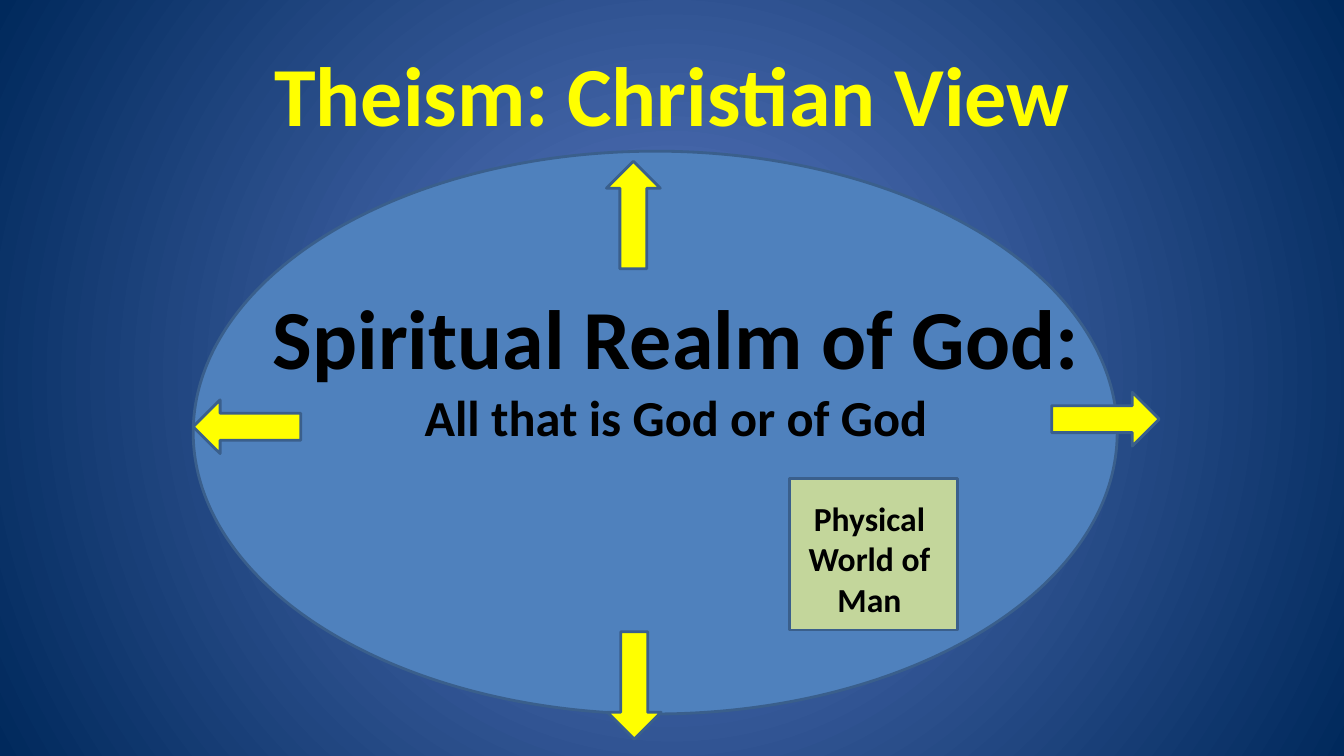
from dataclasses import dataclass

from lxml.etree import SubElement
from pptx import Presentation
from pptx.dml.color import RGBColor
from pptx.enum.shapes import MSO_SHAPE
from pptx.enum.text import MSO_ANCHOR, MSO_AUTO_SIZE, PP_ALIGN
from pptx.oxml.ns import qn
from pptx.slide import Slide
from pptx.text.text import TextFrame
from pptx.util import Inches, Pt

COLS, ROWS = 160, 90
WIDTH, HEIGHT = Inches(13.333), Inches(7.5)

YELLOW = RGBColor(0xFF, 0xFF, 0x00)
BLACK = RGBColor(0x00, 0x00, 0x00)
BLUE = RGBColor(0x4F, 0x81, 0xBD)
GREEN = RGBColor(0xC3, 0xD6, 0x9B)
EDGE = RGBColor(0x3A, 0x5F, 0x8C)
GLOW = RGBColor(0x5E, 0x7C, 0xC5)
NAVY = RGBColor(0x00, 0x29, 0x5C)


@dataclass(frozen=True)
class Box:
    """Area in grid columns and rows."""
    col: float
    row: float
    wide: float
    high: float


@dataclass(frozen=True)
class Form:
    """Filled preset shape."""
    kind: MSO_SHAPE
    box: Box
    fill: RGBColor
    turn: int = 0


@dataclass(frozen=True)
class Line:
    """Paragraph with its size in points."""
    text: str
    size: int


@dataclass(frozen=True)
class Label:
    """Text box with its lines and top inset."""
    box: Box
    lines: tuple[Line, ...]
    top: float = 0.05


def arrow(col: float, row: float, turn: int) -> Form:
    """Describe a yellow arrow."""
    return Form(MSO_SHAPE.RIGHT_ARROW, Box(col, row, 12.8, 6.4), YELLOW, turn)


TITLE = Box(8, 3.6, 144, 15)
FORMS = (
    Form(MSO_SHAPE.OVAL, Box(23, 18, 110, 67), BLUE),
    Form(MSO_SHAPE.RECTANGLE, Box(94, 57, 20, 18), GREEN),
    arrow(69, 22.4, 270),
    arrow(69.1, 78.4, 90),
    arrow(23, 47.6, 180),
    arrow(125.2, 46.7, 0),
)
LABELS = (
    Label(Box(27, 33.4, 107, 20.6), (
        Line("Spiritual Realm of God:", 60),
        Line("All that is God or of God", 36),
    )),
    Label(Box(93, 57, 21, 17.4), (Line("Physical World of Man", 24),), 0.19),
)


def span(box: Box) -> dict[str, int]:
    """Turn a grid area into slide lengths."""
    return {
        "left": round(WIDTH * box.col / COLS),
        "top": round(HEIGHT * box.row / ROWS),
        "width": round(WIDTH * box.wide / COLS),
        "height": round(HEIGHT * box.high / ROWS),
    }


def apply(item: object, values: dict[str, object]) -> None:
    """Set attributes from a dict."""
    for name, value in values.items():
        setattr(item, name, value)


def write(frame: TextFrame, lines: tuple[Line, ...], color: RGBColor) -> None:
    """Fill a frame with bold centred lines."""
    for i, line in enumerate(lines):
        para = frame.add_paragraph() if i else frame.paragraphs[0]
        para.alignment = PP_ALIGN.CENTER
        run = para.add_run()
        run.text = line.text
        apply(run.font, {"name": "Calibri", "size": Pt(line.size), "bold": True})
        run.font.color.rgb = color


def paint(slide: Slide) -> None:
    """Give the slide a round gradient."""
    fill = slide.background.fill
    fill.gradient()
    for stop, color in zip(fill.gradient_stops, (GLOW, NAVY)):
        stop.color.rgb = color
    grad = next(slide.element.iter(qn("a:gradFill")))
    grad.remove(grad.find(qn("a:lin")))
    ring = SubElement(grad, qn("a:path"), {"path": "circle"})
    SubElement(ring, qn("a:fillToRect"), dict.fromkeys("ltrb", "50000"))


def head(slide: Slide) -> None:
    """Place and fill the title."""
    title = slide.shapes.title
    apply(title, span(TITLE))
    apply(title.text_frame, {
        "word_wrap": True,
        "auto_size": MSO_AUTO_SIZE.NONE,
        "vertical_anchor": MSO_ANCHOR.MIDDLE,
    })
    write(title.text_frame, (Line("Theism: Christian View", 60),), YELLOW)


def draw(slide: Slide, form: Form) -> None:
    """Draw a preset shape."""
    shape = slide.shapes.add_shape(form.kind, **span(form.box))
    shape.rotation = form.turn
    shape.shadow.inherit = False
    shape.fill.solid()
    shape.fill.fore_color.rgb = form.fill
    shape.line.color.rgb = EDGE
    shape.line.width = Pt(2)


def note(slide: Slide, label: Label) -> None:
    """Add a text box."""
    frame = slide.shapes.add_textbox(**span(label.box)).text_frame
    apply(frame, {
        "word_wrap": True,
        "auto_size": MSO_AUTO_SIZE.SHAPE_TO_FIT_TEXT,
        "margin_top": Inches(label.top),
    })
    write(frame, label.lines, BLACK)


def main() -> None:
    """Build and save the slide."""
    deck = Presentation()
    apply(deck, {"slide_width": WIDTH, "slide_height": HEIGHT})
    slide = deck.slides.add_slide(deck.slide_layouts.get_by_name("Title Only"))
    paint(slide)
    head(slide)
    for form in FORMS:
        draw(slide, form)
    for label in LABELS:
        note(slide, label)
    deck.save("out.pptx")


if __name__ == "__main__":
    main()
